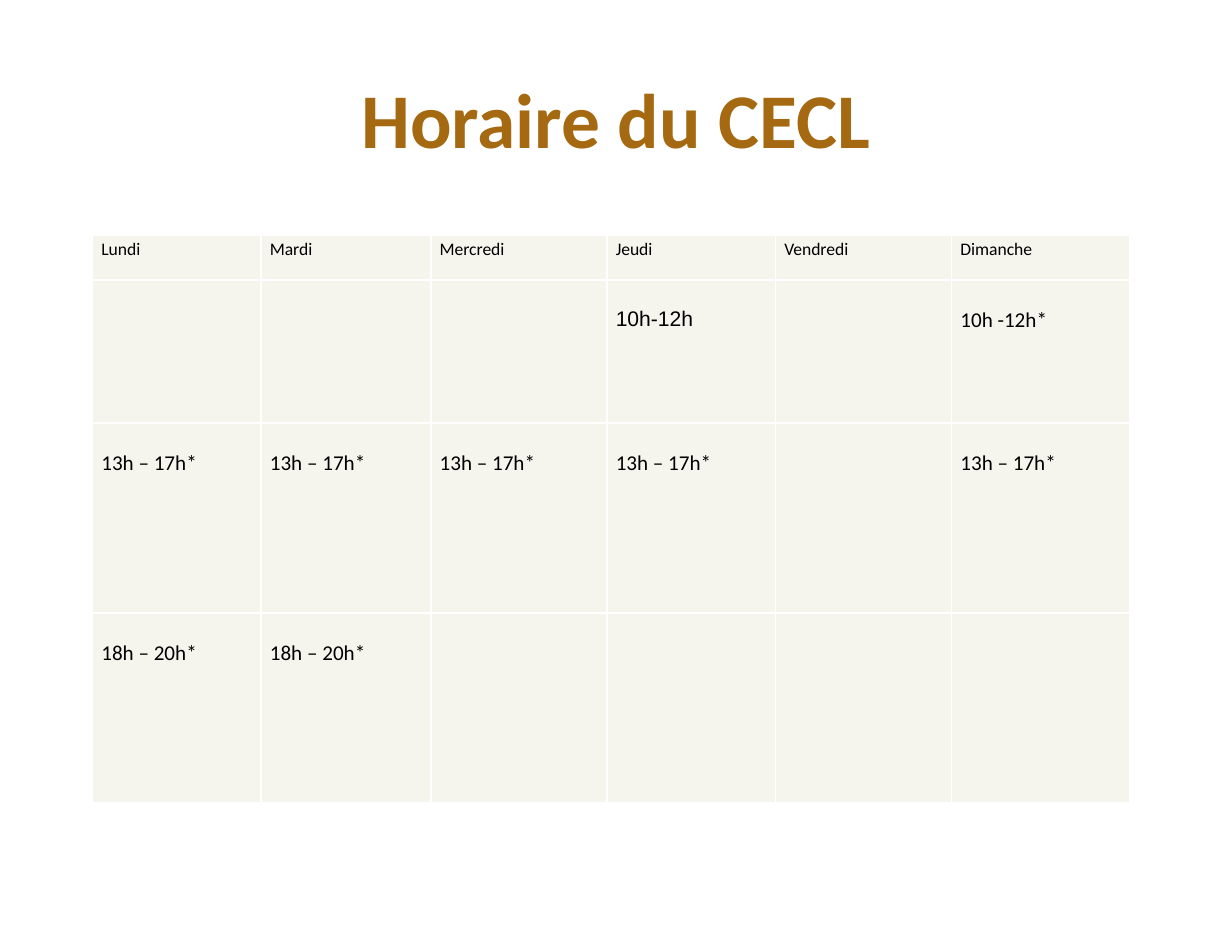
from lxml.etree import SubElement
from pptx import Presentation
from pptx.dml.color import RGBColor
from pptx.enum.text import MSO_ANCHOR as Anchor, PP_ALIGN as Align
from pptx.oxml.ns import qn
from pptx.util import Inches, Pt

WIDTH, HEIGHT = Pt(700), Pt(540)
COLUMNS = [1.33, 1.34, 1.39, 1.33, 1.39, 1.41]
ROWS = [0.35, 1.13, 1.5, 1.5]
AFTERNOON, EVENING = "13h – 17h*", "18h – 20h*"
SCHEDULE = [
    ["Lundi", "Mardi", "Mercredi", "Jeudi", "Vendredi", "Dimanche"],
    ["", "", "", "10h-12h", "", "10h -12h*"],
    [AFTERNOON, AFTERNOON, AFTERNOON, AFTERNOON, "", AFTERNOON],
    [EVENING, EVENING, "", "", "", ""],
]
TITLE = {"name": "Calibri", "size": Pt(44), "bold": True}
DAY = {"name": "Calibri", "size": Pt(10), "bold": False}
HOURS = {**DAY, "size": Pt(12)}
THURSDAY_MORNING = {**HOURS, "name": "Arial"}


def color(value):
    """Turn a hex string into a colour."""
    return RGBColor.from_string(value)


def apply(target, values):
    """Set each attribute named in a dict."""
    for name, value in values.items():
        setattr(target, name, value)


def write(para, text, style, ink):
    """Put one styled span into a paragraph."""
    span = para.add_run()
    span.text = text
    apply(span.font, style)
    span.font.color.rgb = color(ink)


def add_title(page, text):
    """Add the centred heading."""
    box = page.shapes.add_textbox(int(0.05 * WIDTH), int(0.04 * HEIGHT),
                                  int(0.9 * WIDTH), Inches(1.25))
    frame = box.text_frame
    apply(frame, {"word_wrap": True, "vertical_anchor": Anchor.MIDDLE})
    para = frame.paragraphs[0]
    para.alignment = Align.CENTER
    write(para, text, TITLE, "A56911")


def add_borders(cell, ink, width):
    """Draw the four edges of a cell."""
    properties = cell._tc.get_or_add_tcPr()
    for side in ("L", "R", "T", "B"):
        line = SubElement(properties, qn(f"a:ln{side}"), w=str(int(Pt(width))))
        fill = SubElement(line, qn("a:solidFill"))
        SubElement(fill, qn("a:srgbClr"), val=ink)


def fill_cell(cell, text, style, top):
    """Format one cell and write its text."""
    add_borders(cell, "FFFFFF", 1)
    cell.fill.solid()
    cell.fill.fore_color.rgb = color("F5F4ED")
    apply(cell, {"margin_left": Inches(0.07), "margin_right": Inches(0.07),
                 "margin_top": Inches(top), "margin_bottom": 0})
    para = cell.text_frame.paragraphs[0]
    para.line_spacing = 1.15
    if text:
        write(para, text, style, "000000")


def add_schedule(page):
    """Add the weekly timetable."""
    table = page.shapes.add_table(
        len(ROWS), len(COLUMNS), Inches(0.73), Inches(1.86),
        Inches(sum(COLUMNS)), Inches(sum(ROWS))).table
    apply(table, {"first_row": False, "horz_banding": False})
    for column, width in zip(table.columns, COLUMNS):
        column.width = Inches(width)
    for row, height in zip(table.rows, ROWS):
        row.height = Inches(height)
    for r, texts in enumerate(SCHEDULE):
        for c, text in enumerate(texts):
            style = HOURS if r else DAY
            if (r, c) == (1, 3):
                style = THURSDAY_MORNING
            fill_cell(table.cell(r, c), text, style, 0.19 if r else 0)


def main():
    """Build and save the slide."""
    deck = Presentation()
    deck.slide_width = WIDTH
    deck.slide_height = HEIGHT
    page = deck.slides.add_slide(deck.slide_layouts[6])
    add_title(page, "Horaire du CECL")
    add_schedule(page)
    deck.save("out.pptx")


if __name__ == "__main__":
    main()
